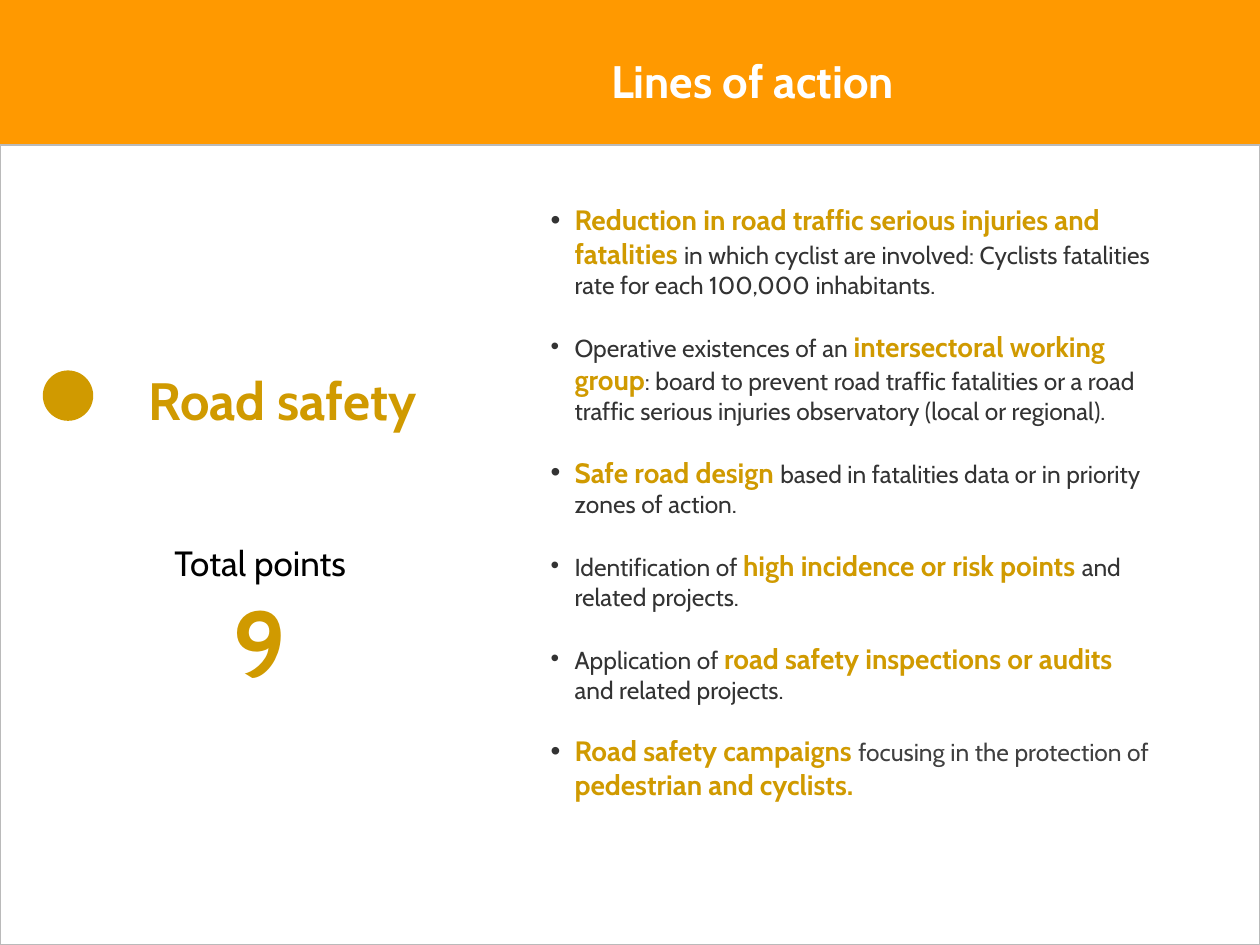
from dataclasses import dataclass

from lxml.etree import SubElement
from pptx import Presentation
from pptx.dml.color import RGBColor
from pptx.enum.shapes import MSO_SHAPE as Preset
from pptx.enum.text import MSO_ANCHOR as Anchor, MSO_AUTO_SIZE as AutoSize, PP_ALIGN as Align
from pptx.oxml.ns import qn
from pptx.util import Inches, Pt

WIDTH, HEIGHT = Inches(10), Inches(7.5)
FONT = "Cabin"
ORANGE, GOLD, WHITE = "FF9900", "D09A00", "FFFFFF"
BLACK, DARK, GREY, BORDER = "000000", "333333", "404040", "BABABA"
BULLET_INDENT = Inches(0.19)


@dataclass(frozen=True)
class Area:
    """A rectangle given as shares of the slide's width and height."""
    left: float
    top: float
    width: float
    height: float

    def place(self, shape) -> None:
        values = {"left": self.left * WIDTH, "top": self.top * HEIGHT,
                  "width": self.width * WIDTH, "height": self.height * HEIGHT}
        for name, value in values.items():
            setattr(shape, name, round(value))


@dataclass(frozen=True)
class Style:
    size: float
    color: str
    bold: bool = False


@dataclass(frozen=True)
class Panel:
    preset: Preset
    area: Area
    fill: str
    line: str = ""


PLAIN = Style(14, DARK)
PLAIN_GREY = Style(14, GREY)
KEY = Style(16, GOLD, True)

PANELS = [
    Panel(Preset.RECTANGLE, Area(0, 0, 1, 1), ORANGE),
    Panel(Preset.RECTANGLE, Area(0, 1.15 / 7.5, 1, 6.35 / 7.5), WHITE, BORDER),
    Panel(Preset.OVAL, Area(0.034, 2.94 / 7.5, 0.04, 0.4 / 7.5), GOLD),
]
TITLE_AREA = Area(0.195, 0.37 / 7.5, 0.805, 0.54 / 7.5)
ACTIONS_AREA = Area(0.427, 1.56 / 7.5, 0.5, 5.54 / 7.5)
TOPIC_AREA = Area(0.108, 2.72 / 7.5, 0.319, 1.24 / 7.5)
POINTS_AREA = Area(0.093, 4.25 / 7.5, 0.227, 1.35 / 7.5)

ACTIONS = [
    [("Reduction in road traffic serious injuries and fatalities ", KEY),
     ("in which cyclist are involved: Cyclists fatalities rate for each 100,000 inhabitants.", PLAIN)],
    [("Operative existences of an ", PLAIN), ("intersectoral working group", KEY),
     (": board to prevent road traffic fatalities or a road traffic serious injuries "
      "observatory (local or regional).", PLAIN)],
    [("Safe road design ", KEY),
     ("based in fatalities data or in priority zones of action.", PLAIN)],
    [("Identification of ", PLAIN), ("high incidence or risk points ", KEY),
     ("and related projects.", PLAIN)],
    [("Application of ", PLAIN), ("road safety inspections or audits ", KEY),
     ("and related projects.", PLAIN)],
    [("Road safety campaigns ", KEY), ("focusing in the protection of ", PLAIN_GREY),
     ("pedestrian and cyclists.", KEY)],
]


def rgb(color: str) -> RGBColor:
    return RGBColor.from_string(color)


def add_panel(slide, panel: Panel):
    shape = slide.shapes.add_shape(panel.preset, 0, 0, 0, 0)
    panel.area.place(shape)
    shape.shadow.inherit = False
    shape.fill.solid()
    shape.fill.fore_color.rgb = rgb(panel.fill)
    if panel.line:
        shape.line.color.rgb = rgb(panel.line)
        shape.line.width = Pt(1)
    else:
        shape.line.fill.background()
    return shape


def add_bullet(paragraph) -> None:
    properties = paragraph._p.get_or_add_pPr()
    properties.set("marL", str(BULLET_INDENT))
    properties.set("indent", str(-BULLET_INDENT))
    color = SubElement(properties, qn("a:buClr"))
    SubElement(color, qn("a:srgbClr"), val=DARK)
    SubElement(properties, qn("a:buChar"), char="•")


def write_text(shape, area: Area, paragraphs, align=Align.LEFT, margin=0.05,
               spacing=1.0, gap=0, bullets=False) -> None:
    area.place(shape)
    frame = shape.text_frame
    frame_format = {"word_wrap": True, "auto_size": AutoSize.NONE,
                    "vertical_anchor": Anchor.TOP,
                    "margin_left": Inches(0.1), "margin_right": Inches(0.1),
                    "margin_top": Inches(margin), "margin_bottom": Inches(margin)}
    for name, value in frame_format.items():
        setattr(frame, name, value)
    paragraph_format = {"alignment": align, "line_spacing": spacing,
                        "space_before": Pt(0), "space_after": Pt(gap)}
    for index, runs in enumerate(paragraphs):
        paragraph = frame.add_paragraph() if index else frame.paragraphs[0]
        for name, value in paragraph_format.items():
            setattr(paragraph, name, value)
        if bullets:
            add_bullet(paragraph)
        for text, style in runs:
            run = paragraph.add_run()
            run.text = text
            font_format = {"name": FONT, "size": Pt(style.size), "bold": style.bold}
            for name, value in font_format.items():
                setattr(run.font, name, value)
            run.font.color.rgb = rgb(style.color)


def main() -> None:
    presentation = Presentation()
    presentation.slide_width, presentation.slide_height = WIDTH, HEIGHT
    slide = presentation.slides.add_slide(presentation.slide_layouts[1])
    title, actions = slide.shapes.title, slide.placeholders[1]

    tree = title.element.getparent()
    first_drawn = tree.index(title.element)
    for position, panel in enumerate(PANELS):
        tree.insert(first_drawn + position, add_panel(slide, panel).element)

    write_text(title, TITLE_AREA, [[("Lines of action", Style(26, WHITE, True))]], Align.CENTER)
    write_text(actions, ACTIONS_AREA, ACTIONS, gap=17, bullets=True)
    topic, points = (slide.shapes.add_textbox(0, 0, 0, 0) for _ in range(2))
    write_text(topic, TOPIC_AREA, [[("Road safety", Style(30, GOLD, True))]],
               margin=0.1, spacing=1.2)
    write_text(points, POINTS_AREA, [[("Total points", Style(20, BLACK))],
                                     [("9", Style(54, GOLD, True))]], Align.CENTER)
    presentation.save("out.pptx")


if __name__ == "__main__":
    main()
